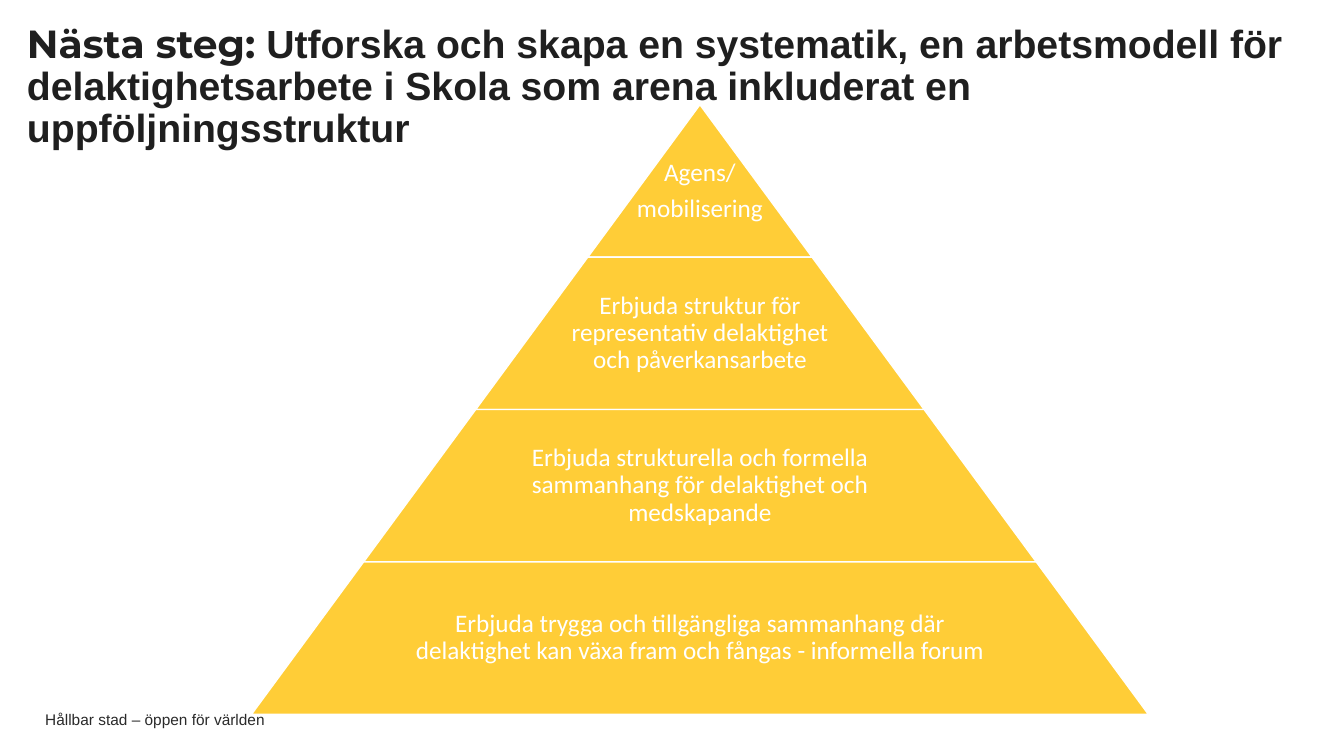
from pptx import Presentation
from pptx.dml.color import RGBColor
from pptx.enum.shapes import MSO_SHAPE
from pptx.enum.text import MSO_ANCHOR, MSO_AUTO_SIZE, PP_ALIGN
from pptx.util import Cm, Pt

TITLE = [
    ("Nästa steg: ", "Montserrat"),
    ("Utforska och skapa en systematik, en arbetsmodell för delaktighetsarbete "
     "i Skola som arena inkluderat en uppföljningsstruktur", "Arial"),
]
LEVELS = [
    ["Agens/", "mobilisering"],
    ["Erbjuda struktur för representativ delaktighet och påverkansarbete"],
    ["Erbjuda strukturella och formella sammanhang för delaktighet och medskapande"],
    ["Erbjuda trygga och tillgängliga sammanhang där delaktighet kan växa fram "
     "och fångas - informella forum"],
]
FOOTER = "Hållbar stad – öppen för världen"

YELLOW = RGBColor(0xFF, 0xCD, 0x37)
WHITE = RGBColor(0xFF, 0xFF, 0xFF)
TITLE_COLOR = RGBColor(0x1F, 0x1F, 0x1F)
FOOTER_COLOR = RGBColor(0x2A, 0x2A, 0x2A)

CENTER = 17.64
PYRAMID_TOP = 2.64
LEVEL_HEIGHT = 3.84
WIDTH_STEP = 5.65
TEXT_SHARE = 0.65
INSET = 0.08
APEX_INSET = 0.6


def apply_format(target, values):
    for name, value in values.items():
        setattr(target, name, value)


def add_run(paragraph, text, color, **font_format):
    run = paragraph.add_run()
    run.text = text
    apply_format(run.font, font_format)
    run.font.color.rgb = color


def set_frame(text_frame, anchor, left, top, right, bottom):
    apply_format(text_frame, {
        "word_wrap": True,
        "auto_size": MSO_AUTO_SIZE.NONE,
        "vertical_anchor": anchor,
        "margin_left": Cm(left),
        "margin_top": Cm(top),
        "margin_right": Cm(right),
        "margin_bottom": Cm(bottom),
    })


def add_title(slide):
    title = slide.shapes.title
    apply_format(title, {"left": Cm(0.43), "top": Cm(0.48),
                         "width": Cm(33.43), "height": Cm(2.06)})
    set_frame(title.text_frame, MSO_ANCHOR.TOP, 0.25, 0.13, 0.25, 0.13)
    paragraph = title.text_frame.paragraphs[0]
    apply_format(paragraph, {"alignment": PP_ALIGN.LEFT, "line_spacing": 0.9})
    for text, font_name in TITLE:
        add_run(paragraph, text, TITLE_COLOR, name=font_name, size=Pt(28), bold=True)


def add_level(slide, index, lines):
    width = WIDTH_STEP * (index + 1)
    top = Cm(PYRAMID_TOP + LEVEL_HEIGHT * index)
    shape = slide.shapes.add_shape(MSO_SHAPE.TRAPEZOID, Cm(CENTER - width / 2), top,
                                   Cm(width), Cm(LEVEL_HEIGHT))
    shape.adjustments[0] = WIDTH_STEP / 2 / LEVEL_HEIGHT
    shape.shadow.inherit = False
    shape.fill.solid()
    shape.fill.fore_color.rgb = YELLOW
    shape.line.color.rgb = WHITE
    shape.line.width = Pt(1)

    text_width = width * TEXT_SHARE if index else width
    label = slide.shapes.add_textbox(Cm(CENTER - text_width / 2), top,
                                     Cm(text_width), Cm(LEVEL_HEIGHT))
    text_frame = label.text_frame
    set_frame(text_frame, MSO_ANCHOR.MIDDLE, INSET, INSET if index else APEX_INSET,
              INSET, INSET)
    for number, line in enumerate(lines):
        paragraph = text_frame.add_paragraph() if number else text_frame.paragraphs[0]
        apply_format(paragraph, {"alignment": PP_ALIGN.CENTER, "line_spacing": 0.9,
                                 "space_after": Pt(6.3)})
        add_run(paragraph, line, WHITE, name="Calibri", size=Pt(18))


def add_footer(slide):
    footer = slide.shapes.add_textbox(Cm(1.14), Cm(17.93), Cm(24), Cm(0.41))
    set_frame(footer.text_frame, MSO_ANCHOR.MIDDLE, 0, 0, 0, 0)
    add_run(footer.text_frame.paragraphs[0], FOOTER, FOOTER_COLOR,
            name="Arial", size=Pt(11))


def main():
    presentation = Presentation()
    presentation.slide_width = Cm(33.87)
    presentation.slide_height = Cm(19.05)
    slide = presentation.slides.add_slide(presentation.slide_layouts[5])
    add_title(slide)
    add_footer(slide)
    for index, lines in enumerate(LEVELS):
        add_level(slide, index, lines)
    presentation.save("out.pptx")


if __name__ == "__main__":
    main()
